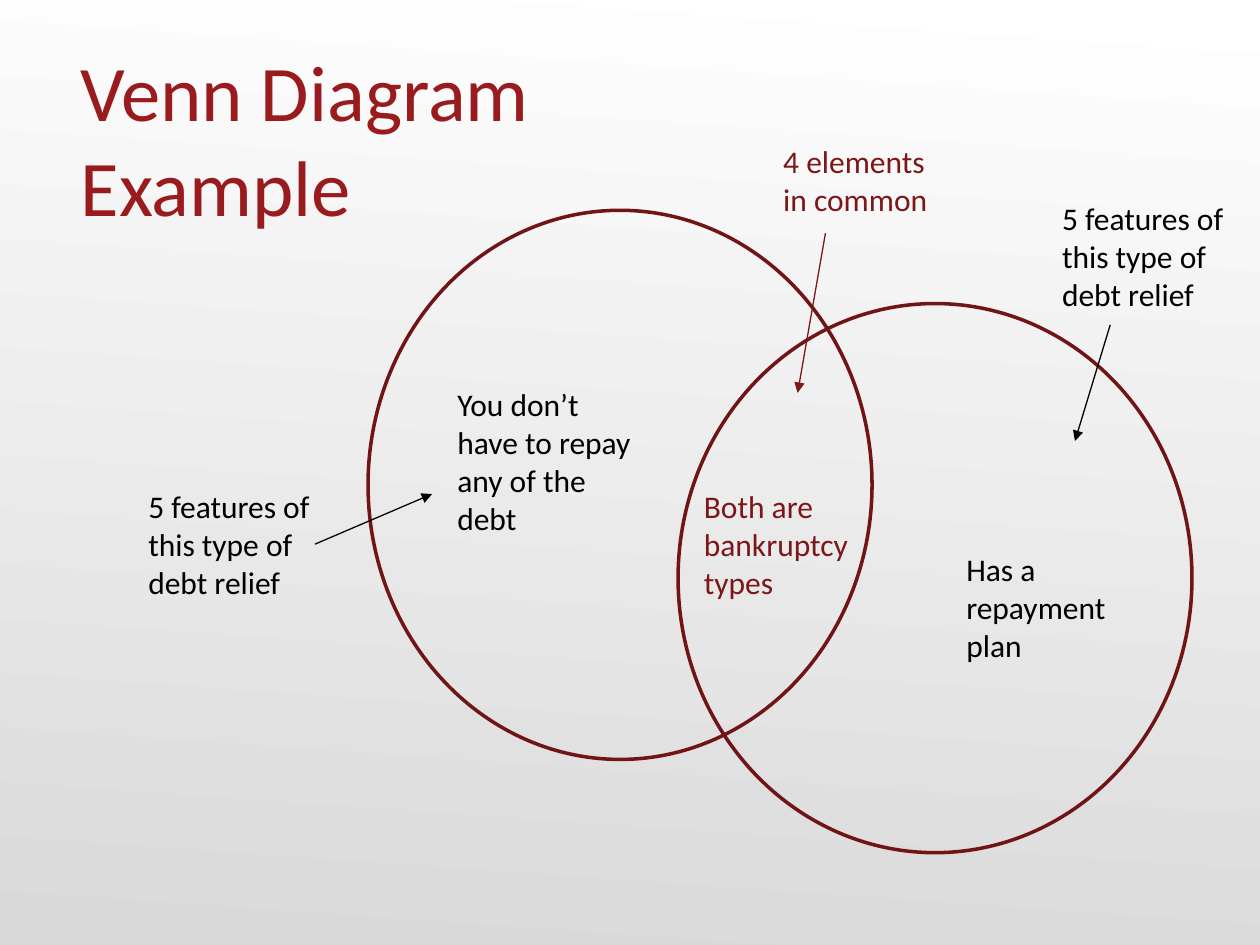
from lxml.etree import SubElement
from pptx import Presentation
from pptx.dml.color import RGBColor
from pptx.enum.shapes import MSO_CONNECTOR, MSO_SHAPE
from pptx.enum.text import MSO_ANCHOR, MSO_AUTO_SIZE, PP_ALIGN
from pptx.oxml.ns import qn
from pptx.util import Cm, Pt

WHITE = RGBColor(0xFF, 0xFF, 0xFF)
GREY = RGBColor(0xD9, 0xD9, 0xD9)
BLACK = RGBColor(0, 0, 0)
TITLE_RED = RGBColor(0x99, 0x1B, 0x1E)
SHARED_RED = RGBColor(0x7D, 0x16, 0x19)
CIRCLE_RED = RGBColor(0x71, 0x14, 0x16)


def write_text(frame, text, size=18, color=BLACK, font="Calibri"):
    frame.word_wrap = True
    frame.auto_size = MSO_AUTO_SIZE.SHAPE_TO_FIT_TEXT
    frame.vertical_anchor = MSO_ANCHOR.TOP
    frame.text = text
    for paragraph in frame.paragraphs:
        paragraph.alignment = PP_ALIGN.LEFT
        paragraph.space_before = Pt(0)
        paragraph.font.size = Pt(size)
        paragraph.font.name = font
        paragraph.font.color.rgb = color


def add_label(slide, text, left, top, width, height, **text_format):
    label = slide.shapes.add_textbox(Cm(left), Cm(top), Cm(width), Cm(height))
    write_text(label.text_frame, text, **text_format)


def add_circle(slide, left, top, width, height):
    circle = slide.shapes.add_shape(
        MSO_SHAPE.OVAL, Cm(left), Cm(top), Cm(width), Cm(height))
    circle.shadow.inherit = False
    circle.fill.background()
    circle.line.color.rgb = CIRCLE_RED
    circle.line.width = Pt(2)


def add_arrow(slide, start, end, color):
    arrow = slide.shapes.add_connector(
        MSO_CONNECTOR.STRAIGHT, *(Cm(value) for value in (*start, *end)))
    arrow.line.color.rgb = color
    arrow.line.width = Pt(0.75)
    SubElement(arrow.line._get_or_add_ln(), qn("a:tailEnd"), type="triangle")
    SubElement(arrow._element.spPr, qn("a:effectLst"))


def paint_background(slide):
    fill = slide.background.fill
    fill.gradient()
    fill.gradient_angle = 266
    for stop, color, position in zip(fill.gradient_stops, (WHITE, GREY), (0, 1)):
        stop.color.rgb = color
        stop.position = position


def place_title(slide, left, top, width, height):
    title = slide.shapes.title
    title.left, title.top = Cm(left), Cm(top)
    title.width, title.height = Cm(width), Cm(height)
    write_text(title.text_frame, "Venn Diagram\nExample", size=45, color=TITLE_RED)


def draw_venn(slide, left, top):
    add_circle(slide, left + 6.25, top + 1.88, 10.36, 11.07)
    add_circle(slide, left, top, 10.16, 11.07)
    add_label(slide, "You don’t have to repay any of the debt",
              left + 1.55, top + 3.4, 4.01, 3.33)
    add_label(slide, "Both are bankruptcy types",
              left + 6.52, top + 5.46, 3.63, 2.57, color=SHARED_RED)
    add_label(slide, "Has a repayment plan",
              left + 11.81, top + 6.73, 3.89, 2.57)


def draw_callout(slide, text, left, top, width, height, start, end, color=BLACK):
    add_label(slide, text, left, top, width, height, color=color)
    add_arrow(slide, (left + start[0], top + start[1]),
              (left + end[0], top + end[1]), color)


def main():
    deck = Presentation()
    deck.slide_width, deck.slide_height = Cm(25.4), Cm(19.05)
    slide = deck.slides.add_slide(deck.slide_layouts[5])
    paint_background(slide)
    place_title(slide, 1.37, 0.74, 11.43, 4.11)
    draw_venn(slide, 7.42, 4.24)
    features = "5 features of this type of debt relief"
    draw_callout(slide, features, 2.74, 9.7, 4.01, 2.57,
                 start=(3.61, 1.27), end=(5.97, 0.26))
    draw_callout(slide, features, 21.16, 3.89, 4.24, 2.57,
                 start=(1.22, 2.66), end=(0.51, 5))
    draw_callout(slide, "4 elements in common", 15.54, 2.74, 3.71, 1.8,
                 start=(1.1, 1.96), end=(0.54, 5.18), color=SHARED_RED)
    deck.save("out.pptx")


if __name__ == "__main__":
    main()
